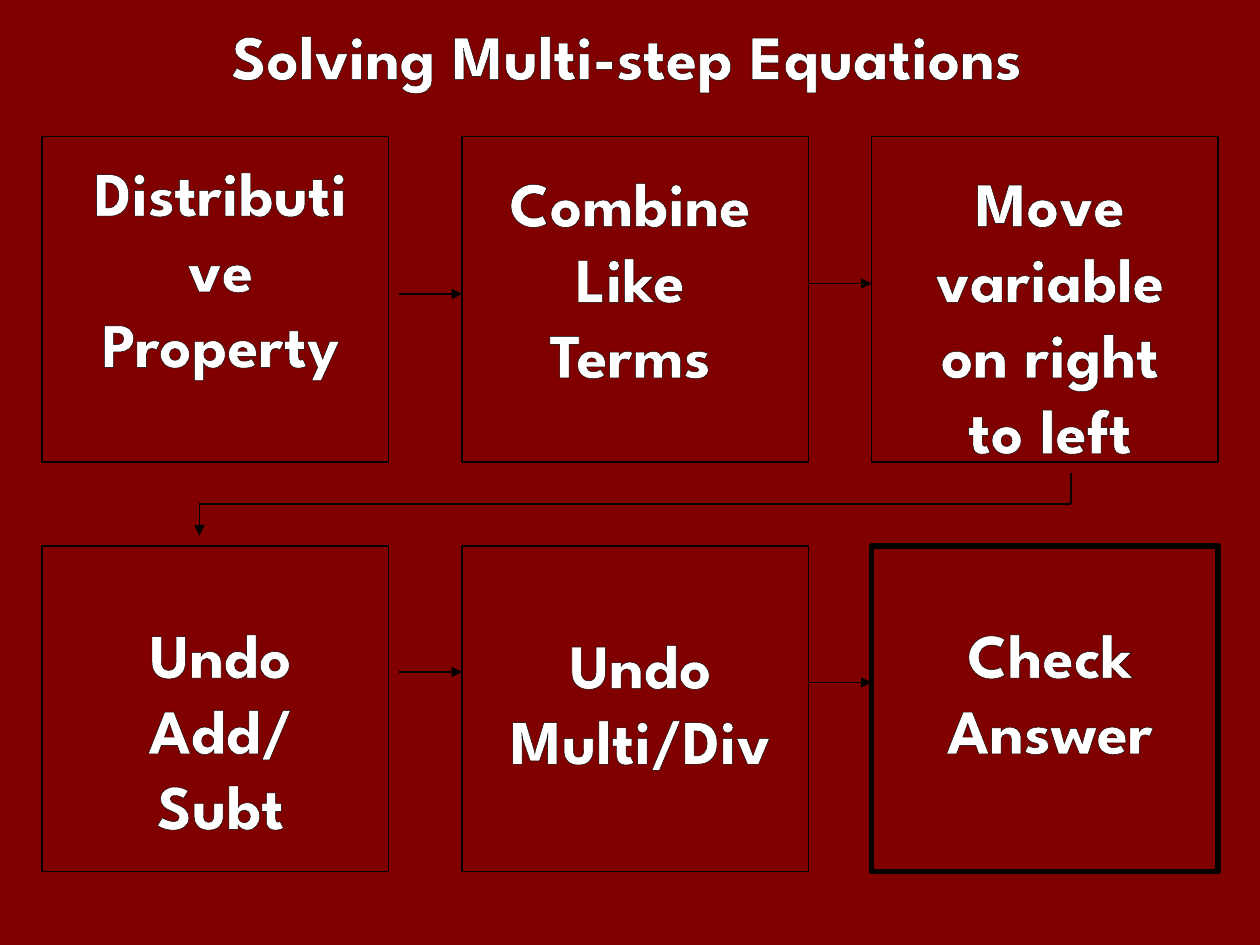
from dataclasses import dataclass

from lxml.etree import SubElement
from pptx import Presentation
from pptx.dml.color import RGBColor as Rgb
from pptx.enum.shapes import MSO_CONNECTOR as Connector, MSO_SHAPE as Shape
from pptx.enum.text import MSO_ANCHOR as Anchor, PP_ALIGN as Align
from pptx.oxml.ns import qn
from pptx.util import Inches, Pt


@dataclass(frozen=True)
class Theme:
    background: Rgb = Rgb(0x80, 0x00, 0x00)
    ink: Rgb = Rgb(0x00, 0x00, 0x00)
    lettering: Rgb = Rgb(0xFF, 0xFF, 0xFF)
    font: str = "League Spartan"
    text_size: float = 36
    thin: float = 0.75
    thick: float = 3


GRID_COLUMNS, GRID_ROWS = 120, 90
BOX_WIDTH, BOX_HEIGHT = 33, 31
BOX_COLUMNS = (4, 44, 83)
BOX_ROWS = (13, 52)
LABEL_WIDTH = 28
LABEL_HEIGHTS = (27, 17)

# Step lines, then the label's column and row on the grid
STEPS = (
    ((("Distributive", "Property"), 7, 14),
     (("Combine", "Like", "Terms"), 46, 15),
     (("Move", "variable", "on right", "to left"), 86, 15)),
    ((("Undo", "Add/Subt"), 7, 58),
     (("Undo", "Multi/Div"), 47, 59),
     (("Check", "Answer"), 86, 58)),
)

# Start and end on the grid, and whether the line ends in an arrowhead
FLOW = (
    ((38, 28), (44, 28), True),
    ((77, 27), (83, 27), True),
    ((38, 64), (44, 64), True),
    ((77, 65), (83, 65), True),
    ((19, 48), (19, 51), True),
    ((19, 48), (102, 48), False),
    ((102, 48), (102, 45), False),
)


def apply_format(target, values):
    for attribute, value in values.items():
        setattr(target, attribute, value)


class FlowSlide:
    def __init__(self, deck, theme):
        self.theme = theme
        self.column = deck.slide_width / GRID_COLUMNS
        self.row = deck.slide_height / GRID_ROWS
        self.slide = deck.slides.add_slide(deck.slide_layouts[6])
        fill = self.slide.background.fill
        fill.solid()
        fill.fore_color.rgb = theme.background

    def place(self, *lengths):
        """Turn alternating columns and rows into slide lengths."""
        units = (self.column, self.row) * 2
        return [round(length * unit) for length, unit in zip(lengths, units)]

    def stroke(self, line, weight):
        line.color.rgb = self.theme.ink
        line.width = Pt(weight)

    def box(self, column, row, weight):
        frame = self.slide.shapes.add_shape(
            Shape.RECTANGLE, *self.place(column, row, BOX_WIDTH, BOX_HEIGHT))
        frame.shadow.inherit = False
        frame.fill.background()
        self.stroke(frame.line, weight)

    def flow_line(self, start, end, arrow):
        link = self.slide.shapes.add_connector(
            Connector.STRAIGHT, *self.place(*start, *end))
        self.stroke(link.line, self.theme.thin)
        properties = link._element.spPr
        if arrow:
            SubElement(properties.find(qn("a:ln")), qn("a:tailEnd"), type="triangle")
        SubElement(properties, qn("a:effectLst"))

    def label(self, lines, column, row, width, height):
        theme = self.theme
        frame = self.slide.shapes.add_textbox(
            *self.place(column, row, width, height)).text_frame
        apply_format(frame, {"word_wrap": False, "vertical_anchor": Anchor.TOP,
                             "text": "\n".join(lines)})
        for paragraph in frame.paragraphs:
            paragraph.alignment = Align.CENTER
            font = paragraph.runs[0].font
            apply_format(font, {"name": theme.font, "size": Pt(theme.text_size),
                                "bold": True})
            font.color.rgb = theme.lettering
            self.outline(font)

    def outline(self, font):
        """Edge the letters; the outline must come first in the run properties."""
        properties = font._element
        edge = SubElement(properties, qn("a:ln"), w=str(Pt(self.theme.thin)))
        solid = SubElement(edge, qn("a:solidFill"))
        SubElement(solid, qn("a:srgbClr"), val=str(self.theme.ink))
        properties.insert(0, edge)


def main():
    deck = Presentation()
    apply_format(deck, {"slide_width": Inches(10), "slide_height": Inches(7.5)})
    theme = Theme()
    page = FlowSlide(deck, theme)

    page.label(["Solving Multi-step Equations"], 5.2, 1, 109, 10)
    final_step = (BOX_COLUMNS[-1], BOX_ROWS[-1])
    for row in BOX_ROWS:
        for column in BOX_COLUMNS:
            is_final = (column, row) == final_step
            page.box(column, row, theme.thick if is_final else theme.thin)
    for start, end, arrow in FLOW:
        page.flow_line(start, end, arrow)
    for steps, height in zip(STEPS, LABEL_HEIGHTS):
        for lines, column, row in steps:
            page.label(lines, column, row, LABEL_WIDTH, height)

    deck.save("out.pptx")


if __name__ == "__main__":
    main()
